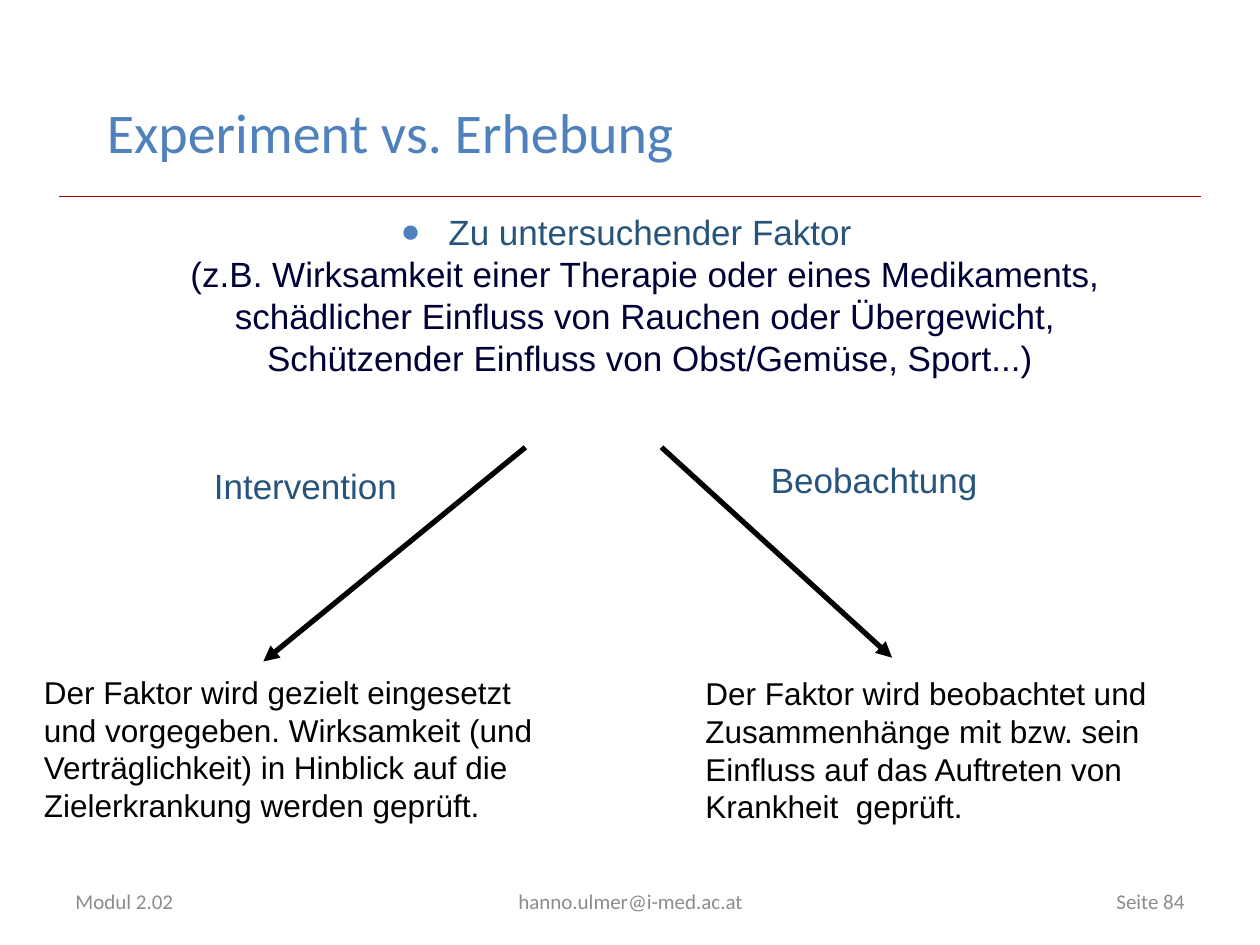
"""Build the slide comparing experiment and survey."""
from lxml.etree import SubElement
from pptx import Presentation
from pptx.dml.color import RGBColor
from pptx.enum.shapes import MSO_CONNECTOR
from pptx.enum.text import MSO_ANCHOR, PP_ALIGN
from pptx.oxml.ns import qn
from pptx.util import Inches, Pt

prs = Presentation()
prs.slide_width, prs.slide_height = Inches(10), Inches(7.5)
col, row = prs.slide_width / 100, prs.slide_height / 75
s = prs.slides.add_slide(prs.slide_layouts[6])
LEFT, CENTER, RIGHT = PP_ALIGN.LEFT, PP_ALIGN.CENTER, PP_ALIGN.RIGHT
TOP, MIDDLE = MSO_ANCHOR.TOP, MSO_ANCHOR.MIDDLE
BLUE, TEAL, NAVY, GREY = "4F81BD", "26547C", "000036", "8C8C8C"


def add_text(text, x, y, w, h, size, color, font="Arial", align=LEFT, anchor=TOP):
    sp = s.shapes.add_textbox(int(x * col), int(y * row), int(w * col), int(h * row))
    tf = sp.text_frame
    tf.word_wrap = True
    tf.vertical_anchor = anchor
    tf.text = text
    p = tf.paragraphs[0]
    p.alignment = align
    for r in p.runs:
        r.font.name, r.font.size = font, Pt(size)
        r.font.color.rgb = RGBColor.from_string(color)
    return p


def add_line(x1, y1, x2, y2, color, width):
    ln = s.shapes.add_connector(MSO_CONNECTOR.STRAIGHT, int(x1 * col), int(y1 * row),
                                int(x2 * col), int(y2 * row))
    ln.line.color.rgb = RGBColor.from_string(color)
    ln.line.width = Pt(width)
    SubElement(ln._element.spPr, qn("a:effectLst"))
    return ln


add_line(4.7, 15.6, 95.3, 15.6, "AC0000", 0.25)
add_text("Experiment vs. Erhebung", 7.5, 6.8, 82.5, 7.2, 32, BLUE, "Calibri", anchor=MIDDLE)

factor = "\v".join([
    "Zu untersuchender Faktor",
    "(z.B. Wirksamkeit einer Therapie oder eines Medikaments, ",
    "schädlicher Einfluss von Rauchen oder Übergewicht, ",
    "Schützender Einfluss von Obst/Gemüse, Sport...)",
])
p = add_text(factor, 4.3, 16.2, 90.8, 53.3, 20, NAVY, align=CENTER)
p.runs[0].font.color.rgb = RGBColor.from_string(TEAL)
pPr = p._p.get_or_add_pPr()
pPr.set("marL", str(Inches(0.38)))
pPr.set("indent", str(Inches(-0.38)))
SubElement(SubElement(pPr, qn("a:buClr")), qn("a:srgbClr"), val=BLUE)
SubElement(pPr, qn("a:buSzPct"), val="95000")
SubElement(pPr, qn("a:buFont"), typeface="Arial")
SubElement(pPr, qn("a:buChar"), char="●")

for x1, x2, y2 in [(41.7, 20.9, 52.5), (52.5, 70.8, 52.2)]:
    ln = add_line(x1, 35.5, x2, y2, "000000", 3)
    SubElement(ln.line._get_or_add_ln(), qn("a:tailEnd"), type="triangle")

add_text("Intervention", 5.8, 36.4, 26.7, 4.3, 20, TEAL, align=RIGHT)
add_text("Beobachtung", 60.2, 35.9, 28.3, 4.3, 20, TEAL)

for text, x, y in [
    ("Der Faktor wird gezielt eingesetzt und vorgegeben. Wirksamkeit (und "
     "Verträglichkeit) in Hinblick auf die Zielerkrankung werden geprüft.", 2.5, 52.9),
    ("Der Faktor wird beobachtet und Zusammenhänge mit bzw. sein "
     "Einfluss auf das Auftreten von Krankheit  geprüft.", 55, 53),
]:
    add_text(text, x, y, 43.3, 13, 18, "000000")

for text, x, w, align in [
    ("Modul 2.02", 5, 23.3, LEFT),
    ("hanno.ulmer@i-med.ac.at", 34.2, 31.7, CENTER),
    ("Seite 84", 71.7, 23.3, RIGHT),
]:
    add_text(text, x, 69.5, w, 4, 12, GREY, "Calibri", align, MIDDLE)

prs.save("out.pptx")
